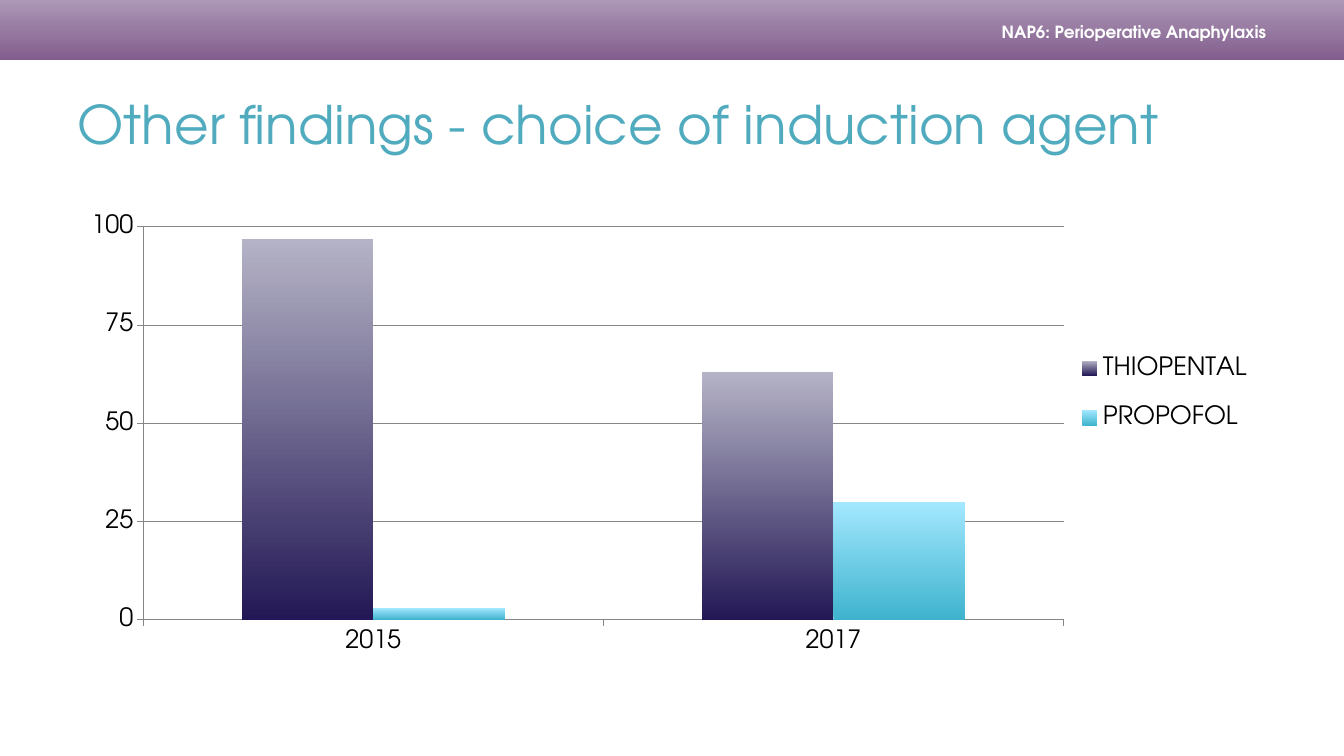
"""Build the slide on the choice of induction agent."""
import copy
import dataclasses

import lxml.etree
import pptx
import pptx.chart.data
import pptx.dml.color
import pptx.enum.chart
import pptx.enum.shapes
import pptx.enum.text
import pptx.oxml.ns
import pptx.util

Inches = pptx.util.Inches
Color = pptx.dml.color.RGBColor.from_string


@dataclasses.dataclass(frozen=True)
class Theme:
    font: str = "TeX Gyre Adventor"
    title: str = "50ABBF"
    header: str = "FFFFFF"
    text: str = "000000"
    grid: str = "868686"
    band: tuple = ((0, "815D8D"), (0.55, "997DA3"), (1, "AD98B6"))
    title_size: int = 38
    header_size: int = 12
    chart_size: int = 18


@dataclasses.dataclass(frozen=True)
class Agent:
    name: str
    values: tuple[int, ...]
    gradient: tuple


@dataclasses.dataclass(frozen=True)
class Region:
    left: float
    top: float
    width: float
    height: float

    def lengths(self) -> list:
        return [Inches(value) for value in dataclasses.astuple(self)]


THEME = Theme()
YEARS = ("2015", "2017")
AGENTS = (
    Agent("THIOPENTAL", (97, 63), ((0, "231855"), (1, "B5B3C6"))),
    Agent("PROPOFOL", (3, 30), ((0, "3FB3CE"), (1, "A3E8FF"))),
)
BAND = Region(0, 0, 13.33, 0.6)
HEADER = Region(8.35, 0.18, 4.45, 0.28)
TITLE = Region(0.67, 0.6, 12, 1.25)
CHART = Region(0.67, 2.05, 12, 4.54)
PLOT = Region(1.42, 2.25, 9.13, 3.9)
LEGEND = Region(10.55, 3.28, 2.0, 1.24)


def paint_gradient(fill, element, stops: tuple) -> None:
    """Fill upwards from the first colour stop to the last."""
    fill.gradient()
    fill.gradient_angle = 90
    stop_list = element.xpath(".//a:gsLst")[0]
    while len(stop_list) < len(stops):
        stop_list.append(copy.deepcopy(stop_list[-1]))
    for stop, (position, color) in zip(fill.gradient_stops, stops):
        stop.position = position
        stop.color.rgb = Color(color)


def set_font(font, size: int, color: str, bold: bool = False) -> None:
    """Apply the theme typeface with the given size and colour."""
    font.name = THEME.font
    font.size = pptx.util.Pt(size)
    font.bold = bold
    font.color.rgb = Color(color)


def place_layout(parent, region: Region, inner: bool = False) -> None:
    """Give a chart part a fixed place within the chart frame."""
    qualified = pptx.oxml.ns.qn
    for previous in parent.findall(qualified("c:layout")):
        parent.remove(previous)
    layout = lxml.etree.Element(qualified("c:layout"))
    manual = lxml.etree.SubElement(layout, qualified("c:manualLayout"))
    settings = {"layoutTarget": "inner"} if inner else {}
    settings |= {
        "xMode": "edge",
        "yMode": "edge",
        "x": (region.left - CHART.left) / CHART.width,
        "y": (region.top - CHART.top) / CHART.height,
        "w": region.width / CHART.width,
        "h": region.height / CHART.height,
    }
    for name, value in settings.items():
        lxml.etree.SubElement(manual, qualified(f"c:{name}"), val=str(value))
    position = parent.find(qualified("c:legendPos"))
    parent.insert(0 if position is None else parent.index(position) + 1, layout)


def add_header(slide) -> None:
    """Draw the top band with its report name."""
    band = slide.shapes.add_shape(
        pptx.enum.shapes.MSO_SHAPE.RECTANGLE, *BAND.lengths()
    )
    band.shadow.inherit = False
    band.line.fill.background()
    paint_gradient(band.fill, band._element, THEME.band)
    frame = slide.shapes.add_textbox(*HEADER.lengths()).text_frame
    frame.word_wrap = True
    frame.vertical_anchor = pptx.enum.text.MSO_ANCHOR.MIDDLE
    frame.margin_right = Inches(0.24)
    paragraph = frame.paragraphs[0]
    paragraph.text = "NAP6: Perioperative Anaphylaxis"
    paragraph.alignment = pptx.enum.text.PP_ALIGN.RIGHT
    set_font(paragraph.font, THEME.header_size, THEME.header, True)


def add_title(slide) -> None:
    """Place and format the slide title."""
    title = slide.shapes.title
    title.left, title.top, title.width, title.height = TITLE.lengths()
    frame = title.text_frame
    frame.auto_size = pptx.enum.text.MSO_AUTO_SIZE.NONE
    frame.vertical_anchor = pptx.enum.text.MSO_ANCHOR.MIDDLE
    paragraph = frame.paragraphs[0]
    paragraph.text = "Other findings - choice of induction agent"
    paragraph.alignment = pptx.enum.text.PP_ALIGN.LEFT
    set_font(paragraph.font, THEME.title_size, THEME.title)


def add_agent_chart(slide) -> None:
    """Draw the clustered columns of agents by year."""
    data = pptx.chart.data.CategoryChartData()
    data.categories = YEARS
    for agent in AGENTS:
        data.add_series(agent.name, agent.values)
    chart = slide.shapes.add_chart(
        pptx.enum.chart.XL_CHART_TYPE.COLUMN_CLUSTERED, *CHART.lengths(), data
    ).chart
    chart.has_title = False
    set_font(chart.font, THEME.chart_size, THEME.text)
    plot = chart.plots[0]
    plot.gap_width = 150
    plot.overlap = 0
    plot.vary_by_categories = False
    for series, agent in zip(plot.series, AGENTS):
        paint_gradient(series.format.fill, series._element, agent.gradient)
    values = chart.value_axis
    values.minimum_scale, values.maximum_scale = 0, 100
    values.major_unit = 25
    values.has_major_gridlines = True
    for part in (chart.category_axis, values, values.major_gridlines):
        part.format.line.color.rgb = Color(THEME.grid)
        part.format.line.width = pptx.util.Pt(0.75)
    for axis in (chart.category_axis, values):
        axis.major_tick_mark = pptx.enum.chart.XL_TICK_MARK.OUTSIDE
    chart.has_legend = True
    chart.legend.position = pptx.enum.chart.XL_LEGEND_POSITION.RIGHT
    chart.legend.include_in_layout = False
    place_layout(chart._chartSpace.xpath(".//c:plotArea")[0], PLOT, True)
    place_layout(chart._chartSpace.xpath(".//c:legend")[0], LEGEND)


def main() -> None:
    """Assemble and save the presentation."""
    presentation = pptx.Presentation()
    presentation.slide_width = Inches(13.33)
    presentation.slide_height = Inches(7.5)
    slide = presentation.slides.add_slide(presentation.slide_layouts[5])
    add_header(slide)
    add_title(slide)
    add_agent_chart(slide)
    presentation.save("out.pptx")


if __name__ == "__main__":
    main()
